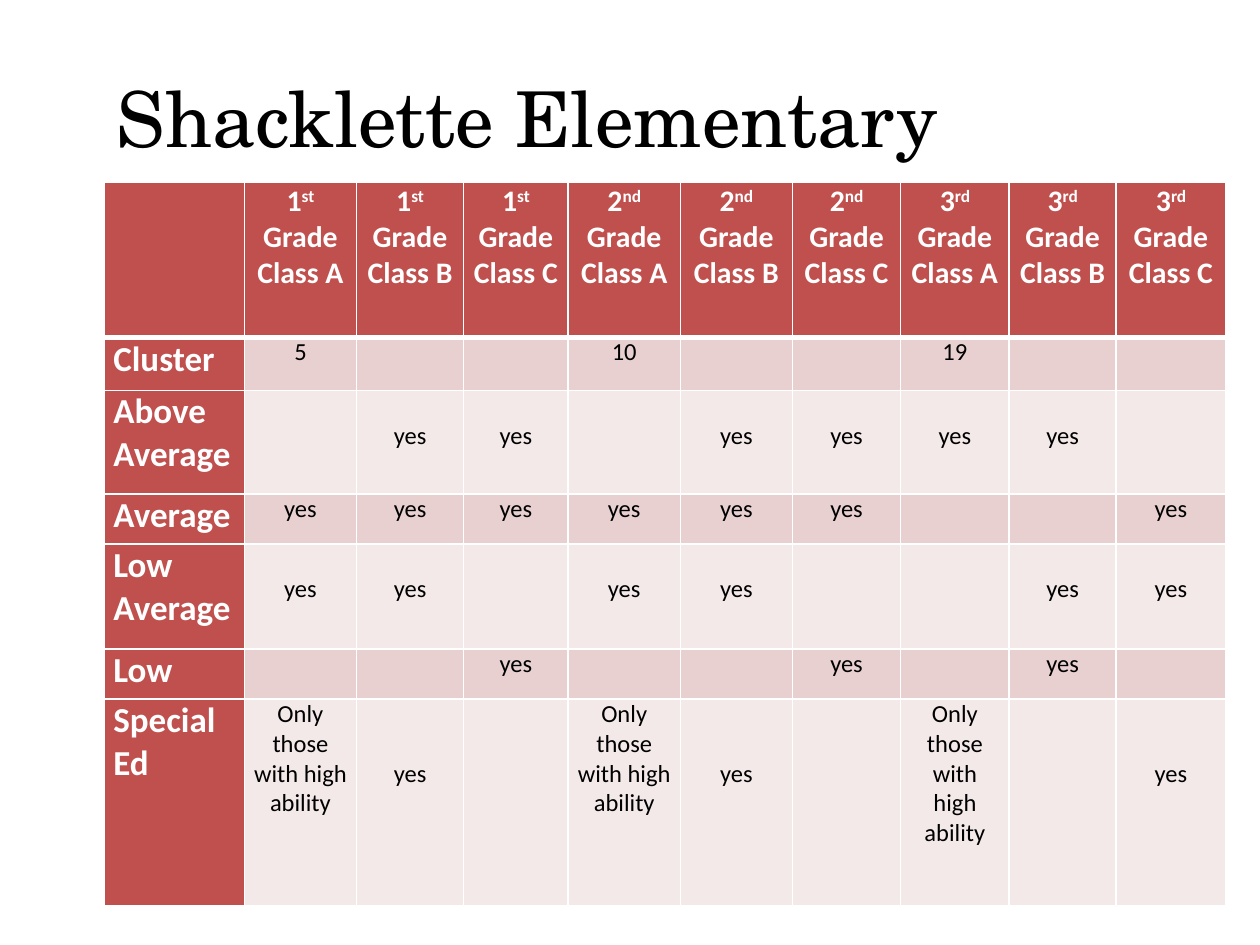
from dataclasses import dataclass

from pptx import Presentation
from pptx.dml.color import RGBColor
from pptx.enum.text import MSO_ANCHOR, PP_ALIGN
from pptx.oxml import parse_xml
from pptx.oxml.ns import nsdecls
from pptx.util import Inches, Pt


@dataclass(frozen=True)
class Theme:
    title_font: str = "TeX Gyre Schola"
    body_font: str = "Calibri"
    title_size: int = 44
    label_size: int = 20
    header_size: int = 17
    value_size: int = 14
    ink: str = "000000"
    paper: str = "FFFFFF"
    accent: str = "C0504D"
    bands: tuple = ("E8D0D0", "F4E9E9")
    rule: int = 1
    header_rule: int = 3
    side_inset: float = 0.07
    value_line: float = 0.24


COLUMN_WIDTHS = [1.11, 0.89, 0.85, 0.83, 0.89, 0.89, 0.86, 0.86, 0.85, 0.87]
ROW_HEIGHTS = [1.23, 0.42, 0.82, 0.4, 0.83, 0.4, 1.64]
GRADES = [("1", "st"), ("2", "nd"), ("3", "rd")]
CLASSES = "ABC"
ABILITY = "Only those with high ability"

# Label, lines that each "yes" is lowered by, and one value per class.
GROUPS = [
    ("Cluster", 0, ["5", "", "", "10", "", "", "19", "", ""]),
    ("Above Average", 1, ["", "yes", "yes", "", "yes", "yes", "yes", "yes", ""]),
    ("Average", 0, ["yes"] * 6 + ["", "", "yes"]),
    ("Low Average", 1, ["yes", "yes", "", "yes", "yes", "", "", "yes", "yes"]),
    ("Low", 0, ["", "", "yes", "", "", "yes", "", "yes", ""]),
    ("Special Ed", 2, [ABILITY, "yes", "", ABILITY, "yes", "", ABILITY, "", "yes"]),
]


class SlideBuilder:
    def __init__(self, slide, theme):
        self.slide = slide
        self.theme = theme

    def style(self, paragraph, size, color, bold=False, font=None, align=PP_ALIGN.CENTER):
        paragraph.alignment = align
        paragraph.font.name = font or self.theme.body_font
        paragraph.font.size = Pt(size)
        paragraph.font.bold = bold
        paragraph.font.color.rgb = RGBColor.from_string(color)

    def title(self, text, left, top, width, height):
        frame = self.slide.shapes.add_textbox(
            Inches(left), Inches(top), Inches(width), Inches(height)).text_frame
        frame.word_wrap = True
        frame.vertical_anchor = MSO_ANCHOR.MIDDLE
        heading = frame.paragraphs[0]
        heading.text = text
        self.style(heading, self.theme.title_size, self.theme.ink,
                   font=self.theme.title_font, align=PP_ALIGN.LEFT)

    def grid(self, left, top, widths, heights):
        table = self.slide.shapes.add_table(
            len(heights), len(widths), Inches(left), Inches(top),
            Inches(sum(widths)), Inches(sum(heights))).table
        for column, width in zip(table.columns, widths):
            column.width = Inches(width)
        for row, height in zip(table.rows, heights):
            row.height = Inches(height)
        for r, row in enumerate(table.rows):
            for c, cell in enumerate(row.cells):
                self.dress_cell(cell, r, c)
        return table

    def dress_cell(self, cell, row, column):
        """Set the insets, borders and fill that follow from a cell's place."""
        theme = self.theme
        cell.margin_left = cell.margin_right = Inches(theme.side_inset)
        cell.margin_top = cell.margin_bottom = 0
        top = theme.header_rule if row == 1 else theme.rule
        bottom = theme.header_rule if row == 0 else theme.rule
        properties = cell._tc.get_or_add_tcPr()
        for side, weight in zip("LRTB", (theme.rule, theme.rule, top, bottom)):
            properties.append(parse_xml(
                f'<a:ln{side} {nsdecls("a")} w="{Pt(weight)}"><a:solidFill>'
                f'<a:srgbClr val="{theme.paper}"/></a:solidFill></a:ln{side}>'))
        is_heading = row == 0 or column == 0
        color = theme.accent if is_heading else theme.bands[(row - 1) % 2]
        cell.fill.solid()
        cell.fill.fore_color.rgb = RGBColor.from_string(color)

    def class_header(self, cell, number, suffix, class_letter):
        grade = cell.text_frame.paragraphs[0]
        class_name = cell.text_frame.add_paragraph()
        for paragraph in (grade, class_name):
            self.style(paragraph, self.theme.header_size, self.theme.paper, bold=True)
        grade.add_run().text = number
        ordinal = grade.add_run()
        ordinal.text = suffix
        ordinal._r.get_or_add_rPr().set("baseline", "30000")
        grade.add_run().text = " Grade"
        class_name.add_run().text = f"Class {class_letter}"

    def group_label(self, cell, text):
        label = cell.text_frame.paragraphs[0]
        label.text = text
        self.style(label, self.theme.label_size, self.theme.paper,
                   bold=True, align=PP_ALIGN.LEFT)

    def value(self, cell, text, lowered_lines):
        entry = cell.text_frame.paragraphs[0]
        entry.text = text
        self.style(entry, self.theme.value_size, self.theme.ink)
        if text == "yes":
            cell.margin_top = Inches(lowered_lines * self.theme.value_line)


def main():
    deck = Presentation()
    deck.slide_width, deck.slide_height = Inches(10), Inches(7.5)
    builder = SlideBuilder(deck.slides.add_slide(deck.slide_layouts[6]), Theme())

    builder.title("Shacklette Elementary", 0.83, 0.3, 8.83, 1.25)
    placement = builder.grid(0.83, 1.45, COLUMN_WIDTHS, ROW_HEIGHTS)

    classes = [(*grade, letter) for grade in GRADES for letter in CLASSES]
    for column, school_class in enumerate(classes, start=1):
        builder.class_header(placement.cell(0, column), *school_class)
    for row, (label, lowered_lines, values) in enumerate(GROUPS, start=1):
        builder.group_label(placement.cell(row, 0), label)
        for column, text in enumerate(values, start=1):
            if text:
                builder.value(placement.cell(row, column), text, lowered_lines)

    deck.save("out.pptx")


if __name__ == "__main__":
    main()
